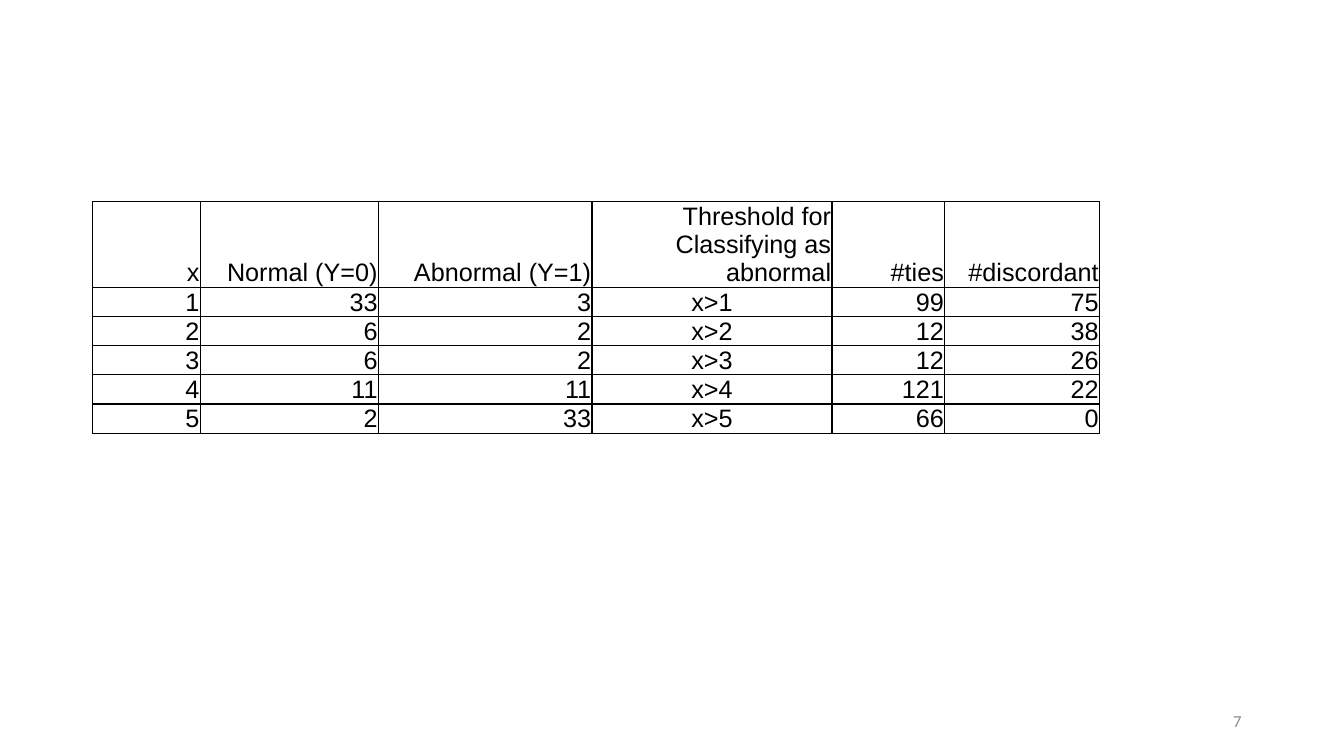
from lxml.etree import SubElement
from pptx import Presentation
from pptx.dml.color import RGBColor
from pptx.enum.text import MSO_ANCHOR as Anchor, PP_ALIGN as Align
from pptx.oxml.ns import qn
from pptx.util import Pt

BLACK = RGBColor(0x00, 0x00, 0x00)
GRAY = RGBColor(0x8C, 0x8C, 0x8C)

HEADINGS = ["x", "Normal (Y=0)", "Abnormal (Y=1)",
            "Threshold for Classifying as abnormal", "#ties", "#discordant"]
COUNTS = [
    (1, 33, 3, "x>1", 99, 75),
    (2, 6, 2, "x>2", 12, 38),
    (3, 6, 2, "x>3", 12, 26),
    (4, 11, 11, "x>4", 121, 22),
    (5, 2, 33, "x>5", 66, 0),
]
COLUMN_WIDTHS = [76.9, 127.3, 152.6, 171.4, 80.6, 110.6]
HEADING_HEIGHT = 43.9
COUNT_HEIGHT = 14.4
THRESHOLD_COLUMN = 3


def write_text(frame, text, size=18, font="Arial", color=BLACK, align=Align.RIGHT):
    paragraph = frame.paragraphs[0]
    paragraph.alignment = align
    run = paragraph.add_run()
    run.text = text
    run.font.size = Pt(size)
    run.font.name = font
    run.font.color.rgb = color


def draw_borders(cell):
    properties = cell._tc.get_or_add_tcPr()
    for position, side in enumerate(("lnL", "lnR", "lnT", "lnB")):
        line = SubElement(properties, qn(f"a:{side}"), w=str(Pt(1)))
        fill = SubElement(line, qn("a:solidFill"))
        SubElement(fill, qn("a:srgbClr"), val=str(BLACK))
        properties.insert(position, line)


deck = Presentation()
deck.slide_width = Pt(960)
deck.slide_height = Pt(540)
slide = deck.slides.add_slide(deck.slide_layouts[6])

rows = [HEADINGS] + COUNTS
threshold_table = slide.shapes.add_table(
    len(rows), len(HEADINGS), Pt(66.2), Pt(144), Pt(sum(COLUMN_WIDTHS)),
    Pt(HEADING_HEIGHT + COUNT_HEIGHT * len(COUNTS))).table
threshold_table.first_row = False
threshold_table.horz_banding = False

for column, width in zip(threshold_table.columns, COLUMN_WIDTHS):
    column.width = Pt(width)

for row_index, values in enumerate(rows):
    is_heading = row_index == 0
    threshold_table.rows[row_index].height = Pt(HEADING_HEIGHT if is_heading else COUNT_HEIGHT)
    for column_index, value in enumerate(values):
        cell = threshold_table.cell(row_index, column_index)
        cell.margin_left = cell.margin_right = cell.margin_top = Pt(0.7)
        cell.margin_bottom = Pt(0)
        at_bottom = is_heading or column_index >= THRESHOLD_COLUMN
        cell.vertical_anchor = Anchor.BOTTOM if at_bottom else Anchor.TOP
        cell.fill.background()
        draw_borders(cell)
        centered = column_index == THRESHOLD_COLUMN and not is_heading
        write_text(cell.text_frame, str(value), align=Align.CENTER if centered else Align.RIGHT)

page_number = slide.shapes.add_textbox(Pt(678), Pt(500.5), Pt(216), Pt(28.75)).text_frame
page_number.word_wrap = True
page_number.vertical_anchor = Anchor.MIDDLE
write_text(page_number, "7", size=12, font="Calibri", color=GRAY)

deck.save("out.pptx")
